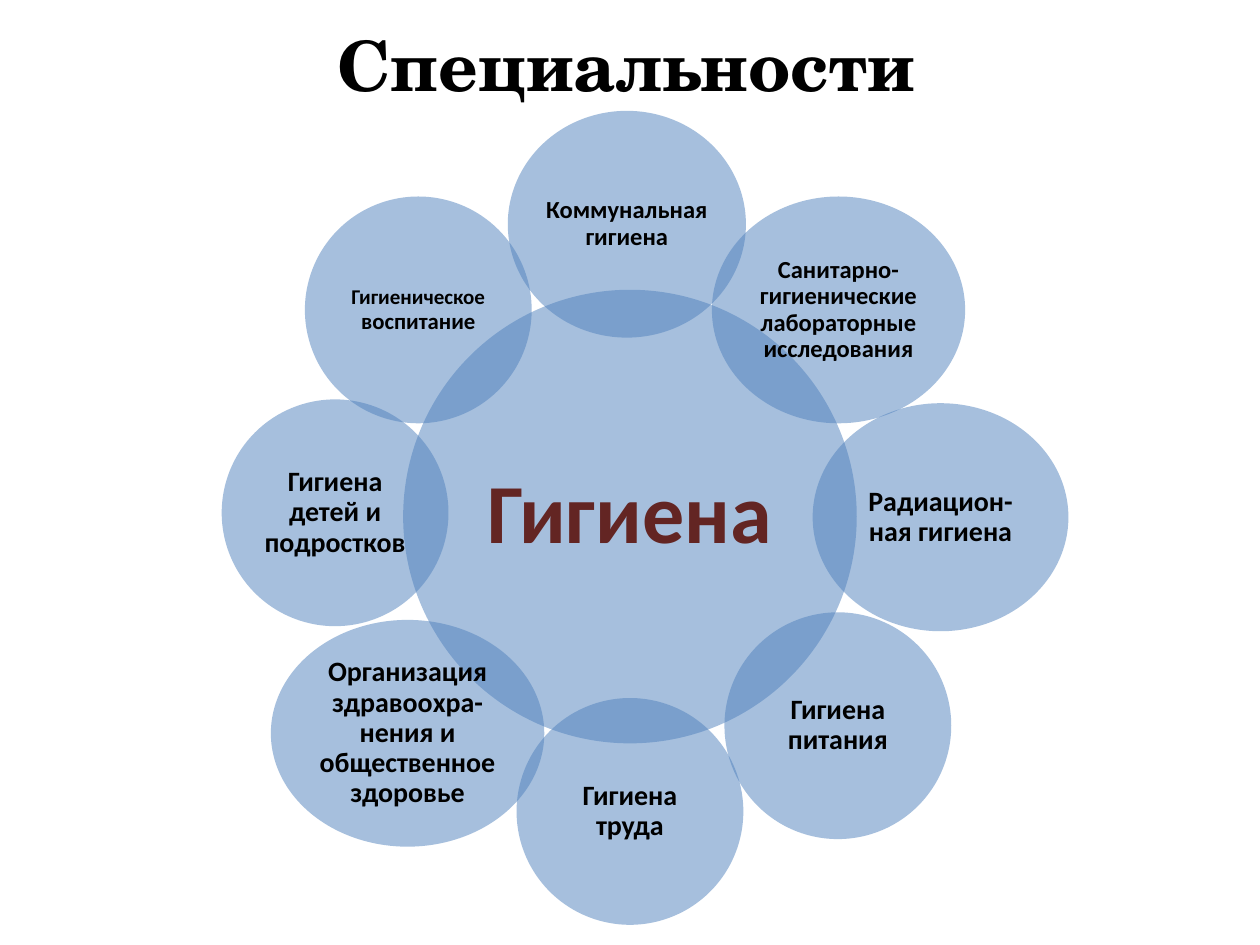
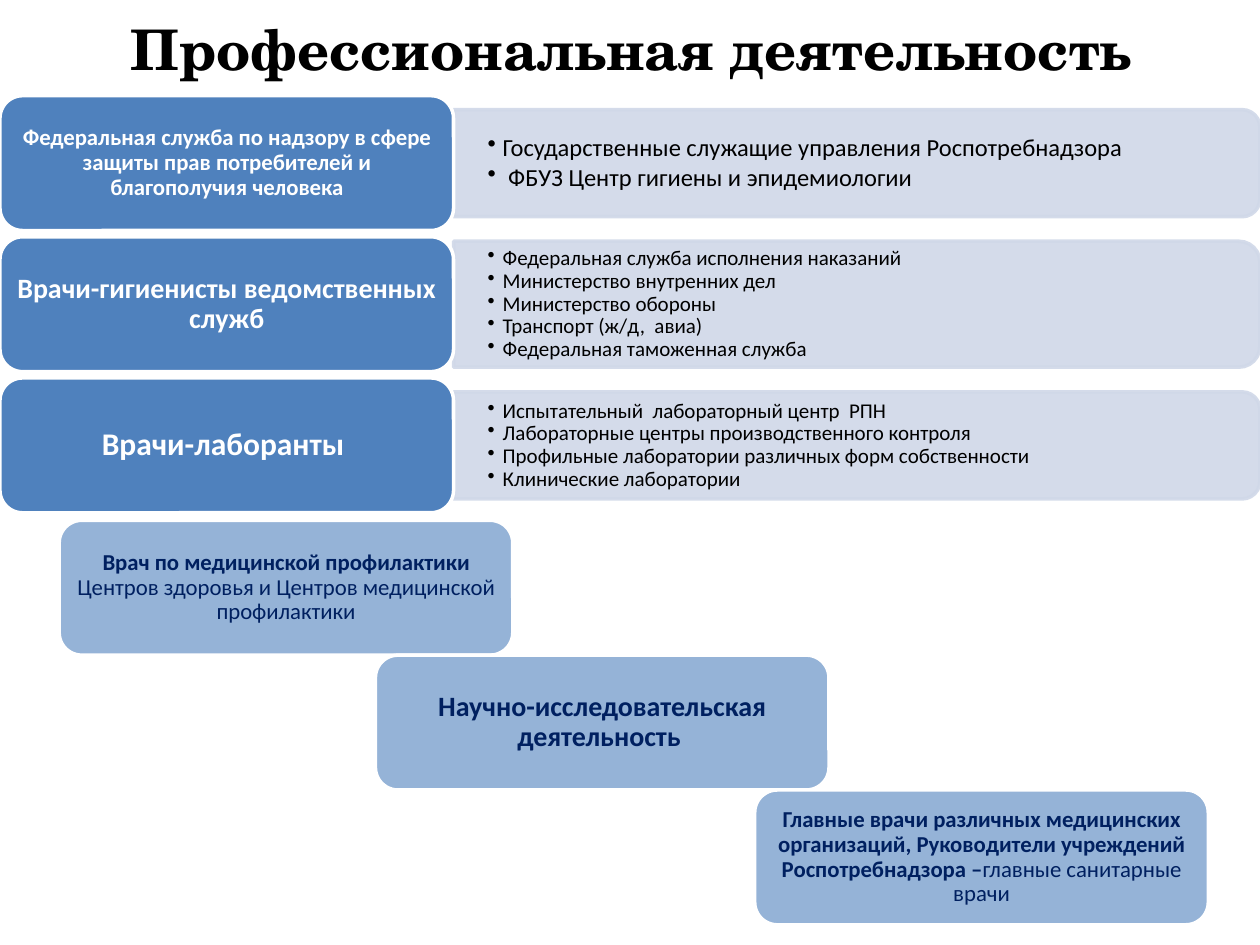
from dataclasses import dataclass

from lxml import etree
from pptx import Presentation
from pptx import util as u
from pptx.dml.color import RGBColor
from pptx.enum import shapes, text
from pptx.oxml import ns

PX = 9144


@dataclass(frozen=True)
class Theme:
    title_font: str = "TeX Gyre Schola"
    body_font: str = "Calibri"
    black: str = "000000"
    white: str = "FFFFFF"
    blue: str = "4F81BD"
    light_blue: str = "95B3D7"
    pale_blue: str = "D0D8E8"
    navy: str = "002060"
    maroon: str = "632523"
    title_large: float = 39.6
    title_small: float = 32
    hub: float = 48
    heading: float = 18
    large: float = 16
    medium: float = 14
    small: float = 13
    tiny: float = 12
    line_width: float = 2
    line_spacing: float = 0.9


def px(n):
    return u.Emu(round(n * PX))


class Deck:
    def __init__(self, theme):
        self.theme = theme
        self.prs = Presentation()
        self.prs.slide_width, self.prs.slide_height = px(1000), px(750)
        self.slide = None

    def add_slide(self, title, box, size):
        self.slide = self.prs.slides.add_slide(self.prs.slide_layouts[5])
        sp = self.slide.shapes.title
        sp.left, sp.top, sp.width, sp.height = map(px, box)
        tf = sp.text_frame
        tf.auto_size = text.MSO_AUTO_SIZE.NONE
        tf.vertical_anchor = text.MSO_ANCHOR.MIDDLE
        p = tf.paragraphs[0]
        p.add_run().text = title
        p.alignment = text.PP_ALIGN.CENTER
        self.font(p, size, self.theme.black, True, self.theme.title_font)

    def font(self, p, size, color, bold=False, name=None):
        p.font.name = name or self.theme.body_font
        p.font.size = u.Pt(size)
        p.font.bold = bold
        p.font.color.rgb = RGBColor.from_string(color)

    def paint(self, fill, color, alpha=100):
        fill.solid()
        fill.fore_color.rgb = RGBColor.from_string(color)
        if alpha < 100:
            clr = fill.fore_color._xFill.find(ns.qn("a:srgbClr"))
            etree.SubElement(clr, ns.qn("a:alpha"), val=str(alpha * 1000))

    def shape(self, kind, box, fill, line=None, alpha=100):
        sp = self.slide.shapes.add_shape(kind, *map(px, box))
        sp.shadow.inherit = False
        self.paint(sp.fill, fill, alpha)
        if line:
            self.paint(sp.line.fill, line, alpha)
            sp.line.width = u.Pt(self.theme.line_width)
        else:
            sp.line.fill.background()
        return sp

    def frame(self, sp, inset_x, inset_y):
        tf = sp.text_frame
        tf.word_wrap = True
        tf.vertical_anchor = text.MSO_ANCHOR.MIDDLE
        tf.margin_left = tf.margin_right = px(inset_x)
        tf.margin_top = tf.margin_bottom = px(inset_y)
        return tf

    def label(self, sp, words, size, color, inset, tail="", tail_size=None, tail_bold=None):
        p = self.frame(sp, *inset).paragraphs[0]
        p.alignment = text.PP_ALIGN.CENTER
        p.line_spacing = self.theme.line_spacing
        self.font(p, size, color, True)
        p.add_run().text = words
        if tail:
            r = p.add_run()
            r.text = tail
            r.font.bold = tail_bold
            if tail_size:
                r.font.size = u.Pt(tail_size)

    def circle(self, box, words, size, color=None, inset=2, **tail):
        sp = self.shape(shapes.MSO_SHAPE.OVAL, box, self.theme.blue, alpha=50)
        self.label(sp, words, size, color or self.theme.black, (inset, inset), **tail)

    def card(self, left, top, fill, color, words, size, inset_x=7, **tail):
        sp = self.shape(shapes.MSO_SHAPE.ROUNDED_RECTANGLE,
                        (left, top, CARD_W, CARD_H), fill, self.theme.white)
        self.label(sp, words, size, color, (inset_x, 3), **tail)

    def bar(self, left, middle, width, height):
        box = (left + (width - height) / 2, middle - width / 2, height, width)
        sp = self.shape(shapes.MSO_SHAPE.ROUND_2_SAME_RECTANGLE, box,
                        self.theme.pale_blue, self.theme.pale_blue, alpha=90)
        sp.rotation = 90

    def bullets(self, box, items, size, gap):
        tf = self.frame(self.slide.shapes.add_textbox(*map(px, box)), 27, 14)
        for i, item in enumerate(items):
            p = tf.paragraphs[0] if i == 0 else tf.add_paragraph()
            p.level = 1
            p.line_spacing = self.theme.line_spacing
            p.space_after = u.Pt(gap)
            self.font(p, size, self.theme.black)
            p.add_run().text = item
            pPr = p._p.get_or_add_pPr()
            pPr.set("marL", str(px(12)))
            pPr.set("indent", str(px(-12)))
            bullet = etree.Element(ns.qn("a:buChar"), char="•")
            pPr.find(ns.qn("a:defRPr")).addprevious(bullet)


CARD_W, CARD_H = 360, 107
ROW_TOP, ROW_STEP = 76, 112


def specialties(deck):
    t = deck.theme
    deck.add_slide("Специальности", (47, 16, 900, 70), t.title_large)
    deck.circle((320, 230, 360, 360), "Гигиена", t.hub, t.maroon, 7)
    petals = [
        ((403, 88, 189, 180), "Коммунальная гигиена", t.medium),
        ((565, 156, 201, 180), "Санитарно-гигиенические лабораторные исследования", t.medium),
        ((645, 320, 203, 181), "Радиацион-ная гигиена", t.large),
        ((575, 486, 180, 180), "Гигиена питания", t.large),
        ((410, 554, 180, 180), "Гигиена труда", t.large),
        ((176, 317, 180, 180), "Гигиена детей и подростков", t.large),
        ((215, 492, 217, 180),
         "Организация здравоохра-нения и общественное здоровье", t.large),
    ]
    for box, words, size in petals:
        deck.circle(box, words, size)
    deck.circle((242, 156, 180, 180), "Гигиеническое", t.tiny,
                tail=" воспитание", tail_size=t.small)


def activity(deck):
    t = deck.theme
    deck.add_slide("Профессиональная деятельность", (51, 0, 900, 76), t.title_small)
    rows = [
        ("Федеральная служба по надзору в сфере защиты прав потребителей"
         " и благополучия человека", t.small, 5, 85, t.medium, 2,
         ["Государственные служащие управления Роспотребнадзора",
          " ФБУЗ Центр гигиены и эпидемиологии"]),
        ("Врачи-гигиенисты ведомственных служб", t.large, 7, 100, t.tiny, 0,
         ["Федеральная служба исполнения наказаний",
          "Министерство внутренних дел",
          "Министерство обороны",
          "Транспорт (ж/д,  авиа)",
          "Федеральная таможенная служба"]),
        ("Врачи-лаборанты ", t.heading, 7, 85, t.tiny, 0,
         ["Испытательный  лабораторный центр  РПН",
          "Лабораторные центры производственного контроля",
          "Профильные лаборатории различных форм собственности",
          "Клинические лаборатории"]),
    ]
    for i, (words, size, inset, height, item_size, gap, items) in enumerate(rows):
        top = ROW_TOP + i * ROW_STEP
        middle = top + CARD_H / 2
        deck.bar(CARD_W, middle, 640, height)
        deck.bullets((CARD_W, middle - height / 2, 636, height), items, item_size, gap)
        deck.card(0, top, t.blue, t.white, words, size, inset)

    steps = [
        (47, 413, "Врач по медицинской профилактики ", t.small, 5,
         "Центров здоровья и Центров медицинской профилактики"),
        (298, 520, "Научно-исследовательская деятельность ", t.large, 7, ""),
        (599, 627, "Главные врачи различных медицинских организаций, Руководители"
         " учреждений Роспотребнадзора –", t.small, 5, "главные санитарные врачи"),
    ]
    for left, top, words, size, inset, tail in steps:
        deck.card(left, top, t.light_blue, t.navy, words, size, inset,
                  tail=tail, tail_bold=False)


def main():
    deck = Deck(Theme())
    specialties(deck)
    activity(deck)
    deck.prs.save("out.pptx")


if __name__ == "__main__":
    main()
